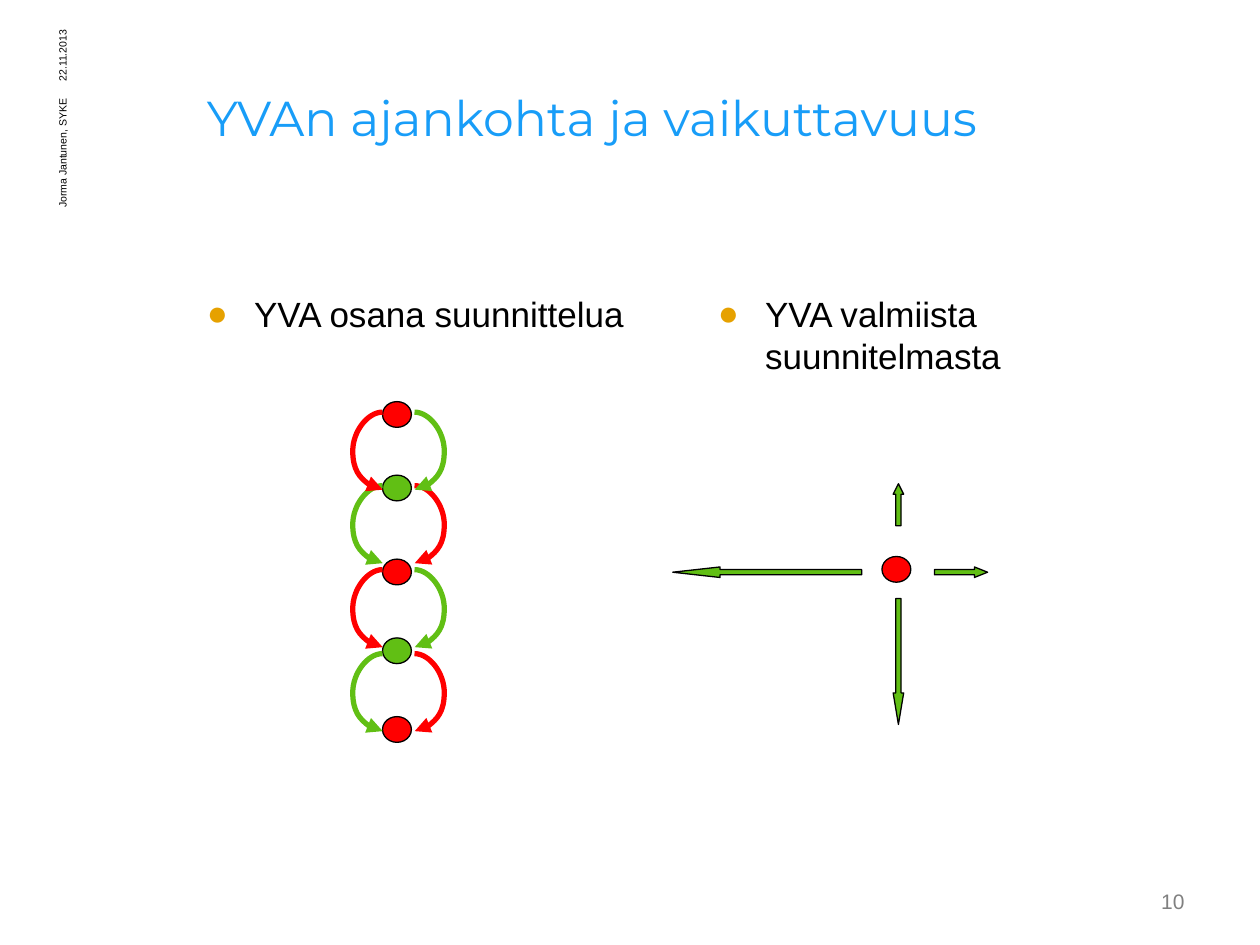
from lxml import etree
from pptx import Presentation
from pptx import util as u
from pptx.dml.color import RGBColor
from pptx.enum import shapes, text
from pptx.oxml.ns import qn

Pt = u.Pt
ALIGN, ANCHOR = text.PP_ALIGN, text.MSO_ANCHOR
KIND = shapes.MSO_SHAPE

COLORS = {"title": "189DF8", "bullet": "E6A100", "black": "000000",
          "grey": "808080", "red": "FF0000", "green": "61BF14"}

TITLE = "YVAn ajankohta ja vaikuttavuus"
COLUMNS = [("YVA osana suunnittelua", 111), ("YVA valmiista suunnitelmasta", 403)]
MARGIN_NOTES = [("22.11.2013", (20.9, 28.1, 33.8, 11.5)),
                ("Jorma Jantunen, SYKE", (-64, 152.6, 203.8, 11.5))]
PAGE = ("10", (638, 500.4, 46, 28.8))

STAGE_TOPS = [229.5, 271.5, 319.5, 364.5, 409.5]
LOOP_TOPS = [235.5, 277.5, 325.5, 373.5]
STAGE_LEFT, STAGE_SIZE = 218.6, (16.5, 14.7)
LOOP_HEIGHT, LOOP_BULGE, LOOP_WIDTH = 44.3, 18, 0.12
LOOP_SIDES = [(218.6, -1, 0), (236.9, 1, 1)]
ALTERNATION = ["red", "green"]

PLAN_CENTER = (504, 318)
IMPACTS = [(KIND.RIGHT_ARROW, (534, 324, 30.4, 6), 1.25),
           (KIND.LEFT_ARROW, (384.4, 324, 108, 6), 4.5),
           (KIND.UP_ARROW, (510.4, 276.4, 6, 24), 1),
           (KIND.DOWN_ARROW, (510.4, 342, 6, 72), 3)]


def color(name):
    return RGBColor.from_string(COLORS[name])


def place(shape, box):
    shape.left, shape.top, shape.width, shape.height = map(Pt, box)


def write(shape, words, size, tint="black", font="Arial", align=ALIGN.LEFT,
          anchor=ANCHOR.TOP, margins=(7.2, 3.6, 7.2, 3.6), bullet=None):
    frame = shape.text_frame
    frame.word_wrap = True
    frame.auto_size = text.MSO_AUTO_SIZE.NONE
    frame.vertical_anchor = anchor
    (frame.margin_left, frame.margin_top,
     frame.margin_right, frame.margin_bottom) = map(Pt, margins)
    paragraph = frame.paragraphs[0]
    paragraph.alignment = align
    paragraph.space_before = Pt(0)
    if bullet:
        properties = paragraph._p.get_or_add_pPr()
        properties.set("marL", str(Pt(27)))
        properties.set("indent", str(-Pt(27)))
        tone = etree.SubElement(properties, qn("a:buClr"))
        etree.SubElement(tone, qn("a:srgbClr"), val=COLORS["bullet"])
        etree.SubElement(properties, qn("a:buChar"), char=bullet)
    run = paragraph.add_run()
    run.text = words
    run.font.size = Pt(size)
    run.font.name = font
    run.font.color.rgb = color(tint)


def add_outlined(slide, kind, box, tint):
    shape = slide.shapes.add_shape(kind, *map(Pt, box))
    shape.shadow.inherit = False
    shape.fill.solid()
    shape.fill.fore_color.rgb = color(tint)
    shape.line.color.rgb = color("black")
    shape.line.width = Pt(0.75)
    return shape


def add_loop(slide, left, top, direction, tint):
    loop = slide.shapes.add_connector(
        shapes.MSO_CONNECTOR.CURVE, Pt(left), Pt(top),
        Pt(left + LOOP_WIDTH), Pt(top + LOOP_HEIGHT))
    loop.line.color.rgb = color(tint)
    loop.line.width = Pt(3)
    etree.SubElement(loop.line._get_or_add_ln(), qn("a:tailEnd"), type="triangle")
    properties = loop._element.spPr
    etree.SubElement(properties, qn("a:effectLst"))
    guides = properties.find(qn("a:prstGeom")).get_or_add_avLst()
    bend = round(direction * LOOP_BULGE / LOOP_WIDTH * 100000)
    etree.SubElement(guides, qn("a:gd"), name="adj1", fmla=f"val {bend}")


def main():
    deck = Presentation()
    deck.slide_width, deck.slide_height = Pt(720), Pt(540)
    slide = deck.slides.add_slide(deck.slide_layouts[3])

    title, *bodies = slide.placeholders
    place(title, (111, 21.6, 573, 90))
    write(title, TITLE, size=28, tint="title", font="Montserrat", anchor=ANCHOR.MIDDLE)
    for body, (words, left) in zip(bodies, COLUMNS):
        place(body, (111 if left == 111 else left, 134, 281, 356.4))
        write(body, words, size=20, margins=(7.2, 33, 7.2, 3.6), bullet="●")

    for level, top in enumerate(STAGE_TOPS):
        add_outlined(slide, KIND.OVAL, (STAGE_LEFT, top, *STAGE_SIZE),
                     ALTERNATION[level % 2])
    for level, top in reversed(list(enumerate(LOOP_TOPS))):
        for left, direction, offset in LOOP_SIDES:
            add_loop(slide, left, top, direction, ALTERNATION[(level + offset) % 2])

    add_outlined(slide, KIND.OVAL, (*PLAN_CENTER, *STAGE_SIZE), "red")
    for kind, box, head in IMPACTS:
        arrow = add_outlined(slide, kind, box, "green")
        arrow.adjustments[0] = 0.5
        arrow.adjustments[1] = head

    for words, box in MARGIN_NOTES:
        note = slide.shapes.add_textbox(*map(Pt, box))
        note.rotation = 270
        write(note, words, size=6, align=ALIGN.RIGHT, margins=(0, 0, 0, 0))
    number, box = PAGE
    write(slide.shapes.add_textbox(*map(Pt, box)), number, size=12, tint="grey",
          align=ALIGN.RIGHT, anchor=ANCHOR.MIDDLE)

    deck.save("out.pptx")


if __name__ == "__main__":
    main()
